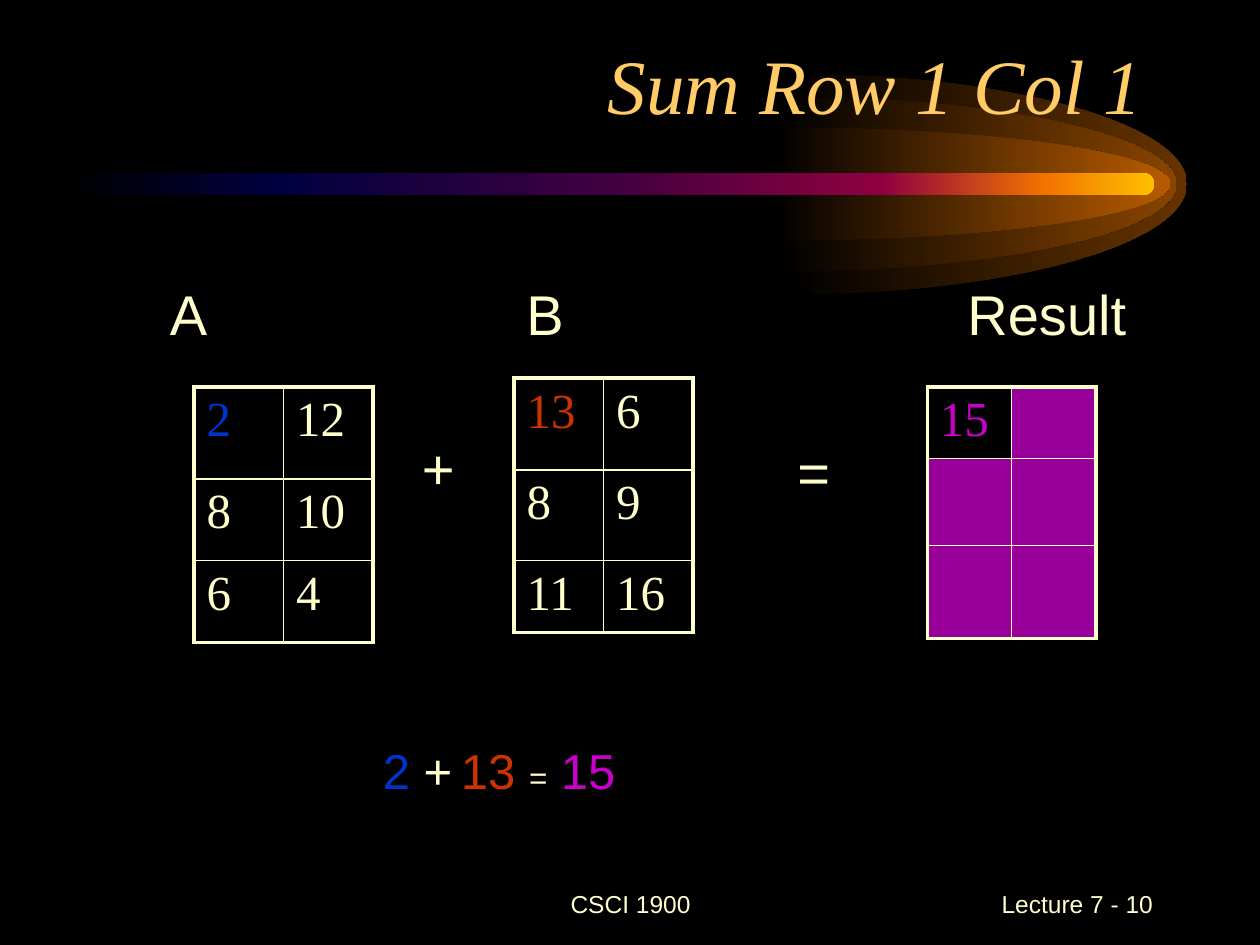
"""Build the slide that adds row 1, column 1 of two matrices."""
from lxml import etree
from pptx import Presentation
from pptx.dml.color import RGBColor
from pptx.enum.shapes import MSO_SHAPE
from pptx.enum.text import MSO_ANCHOR, PP_ALIGN
from pptx.oxml.ns import qn
from pptx.util import Inches, Pt

CREAM, BLACK, BLUE = "FFFFCC", "000000", "0033CC"
RED, PINK, PLUM = "CC3300", "CC00CC", "990099"


def hue(code):
    """Turn a hex string into a colour."""
    return RGBColor.from_string(code)


def write(frame, runs, face="Arial", align=PP_ALIGN.LEFT, slant=False):
    """Fill a frame with runs of text, size and colour."""
    frame.word_wrap = True
    line = frame.paragraphs[0]
    line.alignment = align
    for text, size, code in runs:
        run = line.add_run()
        run.text = text
        look = {"name": face, "size": Pt(size), "italic": slant, "bold": False}
        for key, value in look.items():
            setattr(run.font, key, value)
        run.font.color.rgb = hue(code)


deck = Presentation()
deck.slide_width, deck.slide_height = Inches(10), Inches(7.5)
slide = deck.slides.add_slide(deck.slide_layouts[5])
slide.background.fill.solid()
slide.background.fill.fore_color.rgb = hue(BLACK)
shapes = slide.shapes

comet = []
for left, high, code in [(6.26, 0.875, "663300"), (6.18, 0.695, "894400"), (6.13, 0.45, "B75B00")]:
    bend = [(0, -1), (0.55, -1), (1, -0.55), (1, 0), (1, 0.55), (0.55, 1), (0, 1)]
    arc = [(Inches(left + 3.16 * x), Inches(1.46 + high * y)) for x, y in bend]
    path = shapes.build_freeform(*arc[0], scale=1.0)
    path.add_line_segments(arc[1:], close=True)
    glow = path.convert_to_shape()
    lines = list(glow._element.iter(qn("a:lnTo")))[:6]
    for start in (0, 3):
        curve = etree.Element(qn("a:cubicBezTo"))
        lines[start].addprevious(curve)
        for line in lines[start:start + 3]:
            curve.append(line[0])
            line.getparent().remove(line)
    comet.append((glow, [(0, BLACK), (100, code)]))

tail = shapes.add_shape(
    MSO_SHAPE.ROUNDED_RECTANGLE, Inches(0.5), Inches(1.37), Inches(8.66), Inches(0.18)
)
tail.adjustments[0] = 0.5
comet.append((tail, [
    (0, BLACK), (20, "000040"), (50, "400040"),
    (75, "8F0040"), (90, "F27300"), (100, "FFBF00"),
]))

for shape, stops in comet:
    shape.shadow.inherit = False
    shape.line.fill.background()
    shape.fill.gradient()
    shape.fill.gradient_angle = 0
    ramp = shape._element.spPr.find(".//" + qn("a:gsLst"))
    for old in list(ramp):
        ramp.remove(old)
    for place, code in stops:
        stop = etree.SubElement(ramp, qn("a:gs"), pos=str(place * 1000))
        etree.SubElement(stop, qn("a:srgbClr"), val=code)

title = shapes.title
tail._element.addnext(title._element)
spot = {"left": 0.67, "top": 0.25, "width": 8.5, "height": 0.83}
for key, value in spot.items():
    setattr(title, key, Inches(value))
title.text_frame.vertical_anchor = MSO_ANCHOR.BOTTOM
write(title.text_frame, [("Sum Row 1 Col 1", 44, "FFCC66")],
      "Times New Roman", PP_ALIGN.RIGHT, True)

grids = [
    (1.54, 3.07, 0.71, [0.73, 0.65, 0.65], ["2", "12", "8", "10", "6", "4"], BLUE, None),
    (4.08, 3, 0.71, [0.73, 0.72, 0.57], ["13", "6", "8", "9", "11", "16"], RED, None),
    (7.36, 3.07, 0.67, [0.57, 0.69, 0.74], ["15", "", "", "", "", ""], PINK, PLUM),
]
for left, top, wide, rows, values, first, back in grids:
    table = shapes.add_table(
        3, 2, Inches(left), Inches(top), Inches(2 * wide), Inches(sum(rows))
    ).table
    table.first_row = table.horz_banding = False
    for col in table.columns:
        col.width = Inches(wide)
    for row, high in zip(table.rows, rows):
        row.height = Inches(high)
    for spot, (cell, value) in enumerate(zip(table.iter_cells(), values)):
        r, c = divmod(spot, 2)
        if value:
            write(cell.text_frame, [(value, 28, CREAM if spot else first)], "Times New Roman")
        if spot == 0 or back:
            cell.fill.solid()
            cell.fill.fore_color.rgb = hue(back if spot else BLACK)
        else:
            cell.fill.background()
        outer = {"lnL": c == 0, "lnR": c == 1, "lnT": r == 0, "lnB": r == 2}
        props = cell._tc.get_or_add_tcPr()
        for order, (side, thick) in enumerate(outer.items()):
            edge = etree.Element(qn("a:" + side), w=str(Pt(2.25 if thick else 1)))
            paint = etree.SubElement(edge, qn("a:solidFill"))
            etree.SubElement(paint, qn("a:srgbClr"), val=CREAM)
            props.insert(order, edge)

total = [
    ("2 ", 28, BLUE), ("+", 28, CREAM), (" ", 18, CREAM),
    ("13 ", 28, RED), ("=", 18, CREAM), (" 15", 28, PINK),
]
notes = [
    (3.25, 3.39, 0.46, 0.63, [("+", 32, CREAM)], PP_ALIGN.LEFT),
    (6.23, 3.42, 0.77, 0.63, [("=", 32, CREAM)], PP_ALIGN.LEFT),
    (1.25, 2.17, 0.5, 0.63, [("A", 32, CREAM)], PP_ALIGN.LEFT),
    (4.08, 2.17, 0.5, 0.63, [("B", 32, CREAM)], PP_ALIGN.LEFT),
    (7.58, 2.17, 1.5, 0.63, [("Result", 32, CREAM)], PP_ALIGN.LEFT),
    (2.94, 5.83, 3.81, 0.57, total, PP_ALIGN.LEFT),
    (3.42, 6.92, 3.17, 0.5, [("CSCI 1900", 14, CREAM)], PP_ALIGN.CENTER),
    (7.17, 6.92, 2.08, 0.5, [("Lecture 7 - 10", 14, CREAM)], PP_ALIGN.RIGHT),
]
for left, top, wide, high, runs, align in notes:
    box = shapes.add_textbox(Inches(left), Inches(top), Inches(wide), Inches(high))
    box.text_frame.vertical_anchor = MSO_ANCHOR.MIDDLE if top > 6.5 else MSO_ANCHOR.TOP
    write(box.text_frame, runs, align=align)

deck.save("out.pptx")
